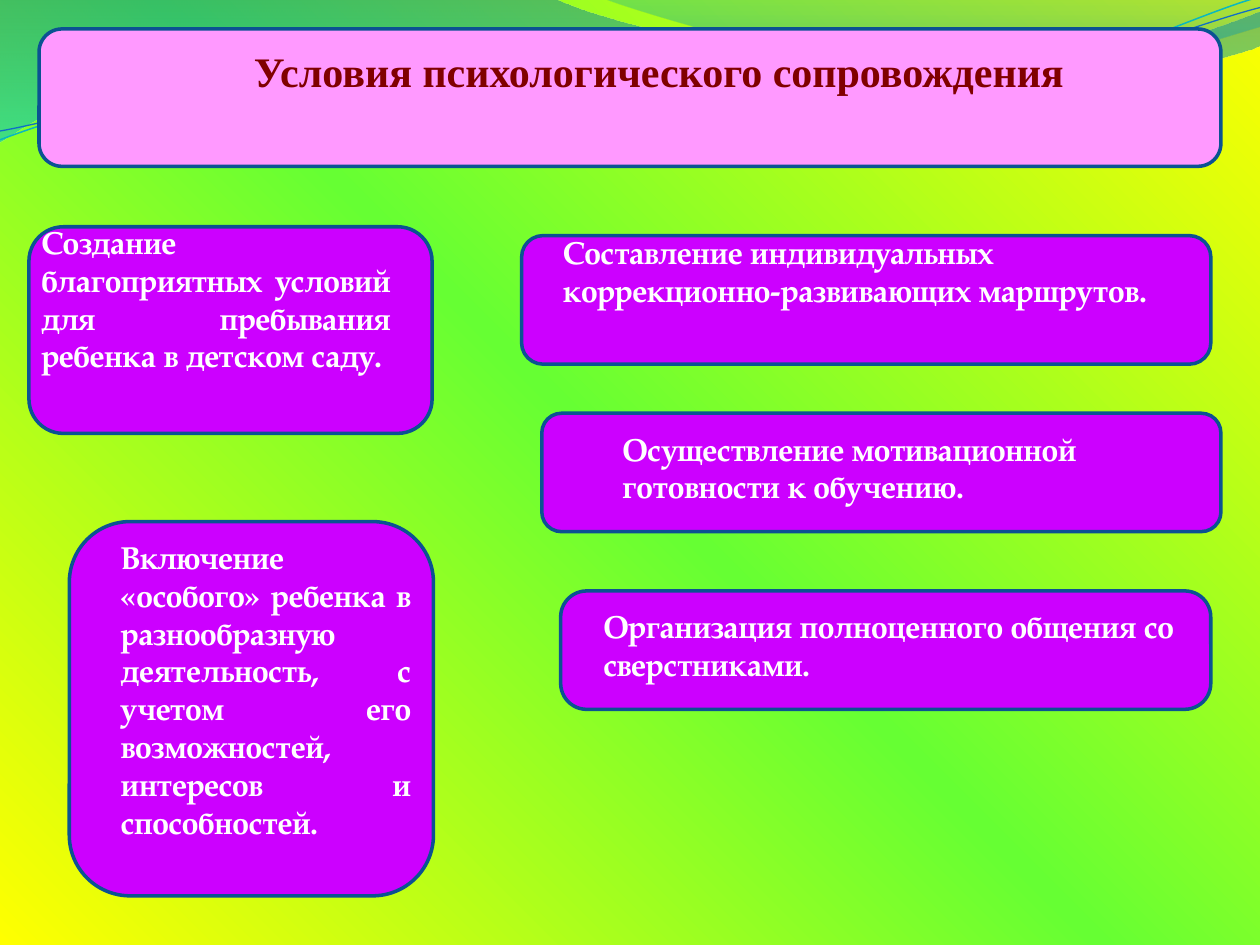
from dataclasses import dataclass

from lxml.etree import SubElement
from pptx import Presentation
from pptx.dml.color import RGBColor
from pptx.enum.shapes import MSO_SHAPE
from pptx.enum.text import MSO_AUTO_SIZE, PP_ALIGN
from pptx.oxml.ns import qn
from pptx.util import Inches, Pt


@dataclass(frozen=True)
class Theme:
    edge: str = "0B5292"
    banner: str = "FF99FF"
    card: str = "CC00FF"
    title: str = "800000"
    body: str = "FFFFFF"
    title_font: str = "Times New Roman"
    body_font: str = "TeX Gyre Pagella"
    title_size: float = 24
    body_size: float = 18
    edge_width: float = 2
    backdrop: tuple = ((0, "FFFF00", 100), (50, "66FF33", 100), (100, "FFFF00", 100))
    wide_wave: tuple = ((0, "0074A1", 45), (100, "00C6CF", 55))
    crest_wave: tuple = ((0, "00A1A9", 30), (80, "008BBF", 45))
    upper_strand: str = "0AB8BF"
    lower_strand: str = "0F6FC6"


def set_stops(grad, stops):
    """Replace a gradient's contents with (position %, colour, opacity %) stops."""
    for child in list(grad):
        grad.remove(child)
    stop_list = SubElement(grad, qn("a:gsLst"))
    for position, color, opacity in stops:
        stop = SubElement(stop_list, qn("a:gs"), pos=str(position * 1000))
        clr = SubElement(stop, qn("a:srgbClr"), val=color)
        if opacity < 100:
            SubElement(clr, qn("a:alpha"), val=str(opacity * 1000))


def bend_segments(sp, segments):
    """Merge each curve's three straight steps into one cubic Bezier."""
    steps = iter(list(sp._element.iter(qn("a:lnTo"))))
    for seg in segments:
        first = next(steps)
        if len(seg) == 6:
            first.tag = qn("a:cubicBezTo")
            for step in (next(steps), next(steps)):
                first.append(step[0])
                step.getparent().remove(step)


class SlideBuilder:
    def __init__(self, slide, theme):
        self.s = slide
        self.theme = theme

    def background(self):
        self.s.background.fill.gradient()
        grad = self.s._element.find(".//" + qn("a:gradFill"))
        set_stops(grad, self.theme.backdrop)
        radial = SubElement(grad, qn("a:path"), path="circle")
        SubElement(radial, qn("a:fillToRect"), l="100000", b="100000")

    def outline(self, start, segments, close):
        """Draw segments: 2 numbers are a line's end, 6 a cubic curve's points."""
        points = [(Inches(seg[i]), Inches(seg[i + 1]))
                  for seg in segments for i in range(0, len(seg), 2)]
        builder = self.s.shapes.build_freeform(*map(Inches, start))
        builder.add_line_segments(points, close=close)
        sp = builder.convert_to_shape()
        bend_segments(sp, segments)
        sp.shadow.inherit = False
        return sp

    def wave(self, start, segments, stops):
        sp = self.outline(start, segments, close=True)
        sp.line.fill.background()
        sp.fill.gradient()
        grad = sp._element.spPr.find(qn("a:gradFill"))
        set_stops(grad, stops)
        SubElement(grad, qn("a:lin"), ang="5400000", scaled="0")

    def strand(self, start, segments, color, width):
        sp = self.outline(start, segments, close=False)
        sp.fill.background()
        sp.line.color.rgb = RGBColor.from_string(color)
        sp.line.width = Pt(width)

    def panel(self, box, color, radius=None):
        sp = self.s.shapes.add_shape(MSO_SHAPE.ROUNDED_RECTANGLE, *map(Inches, box))
        if radius is not None:
            sp.adjustments[0] = radius
        sp.shadow.inherit = False
        sp.fill.solid()
        sp.fill.fore_color.rgb = RGBColor.from_string(color)
        sp.line.color.rgb = RGBColor.from_string(self.theme.edge)
        sp.line.width = Pt(self.theme.edge_width)

    def text(self, box, text, *, font, size, color, align=PP_ALIGN.LEFT):
        tf = self.s.shapes.add_textbox(*map(Inches, box)).text_frame
        tf.word_wrap = True
        tf.auto_size = MSO_AUTO_SIZE.SHAPE_TO_FIT_TEXT
        p = tf.paragraphs[0]
        p.alignment = align
        r = p.add_run()
        r.text = text
        r.font.name = font
        r.font.size = Pt(size)
        r.font.bold = True
        r.font.color.rgb = RGBColor.from_string(color)

    def banner(self, box, text_box, text):
        t = self.theme
        self.panel(box, t.banner)
        self.text(text_box, text, font=t.title_font, size=t.title_size,
                  color=t.title, align=PP_ALIGN.CENTER)

    def card(self, box, text_box, text, align=PP_ALIGN.LEFT, radius=None):
        t = self.theme
        self.panel(box, t.card, radius)
        self.text(text_box, text, font=t.body_font, size=t.body_size,
                  color=t.body, align=align)


CARDS = [
    dict(box=(0.23, 1.8, 3.2, 1.64), text_box=(0.23, 1.72, 2.97, 1.92),
         text="Создание благоприятных условий для пребывания ребенка в детском саду.",
         align=PP_ALIGN.JUSTIFY),
    dict(box=(4.45, 4.69, 5.16, 0.94), text_box=(4.69, 4.77, 4.77, 1.01),
         text="Организация полноценного общения со сверстниками.", radius=0.22),
    dict(box=(4.14, 1.87, 5.47, 1.02), text_box=(4.37, 1.8, 5, 1.01),
         text="Составление индивидуальных коррекционно-развивающих маршрутов."),
    dict(box=(0.55, 4.14, 2.89, 2.97), text_box=(0.86, 4.22, 2.5, 2.52),
         text="Включение «особого» ребенка в разнообразную деятельность, с учетом его "
              "возможностей, интересов и способностей.",
         align=PP_ALIGN.JUSTIFY),
    dict(box=(4.3, 3.28, 5.39, 0.94), text_box=(4.84, 3.36, 4.45, 1.31),
         text="Осуществление мотивационной готовности к обучению."),
]


def draw_waves(b):
    t = b.theme
    b.wave((0, 0), [(4.4, -0.01), (4.76, 0.17, 6.64, 0.63, 7.58, 0.63),
                    (8.53, 0.63, 9.58, 0.26, 10, 0.09), (10.01, 0.36),
                    (9.83, 0.44, 8.7, 0.76, 7.46, 0.75),
                    (6.22, 0.75, 3.82, 0.28, 2.57, 0.34),
                    (1.29, 0.36, 0.46, 0.83, -0.01, 1.13)], t.wide_wave)
    b.wave((4.79, -0.01), [(5.09, 0.11, 6.82, 0.62, 7.69, 0.65),
                           (8.56, 0.69, 9.61, 0.32, 10, 0.21), (10, 0)], t.crest_wave)
    b.strand((0, 1.11), [(0.48, 0.93, 1.58, 0.57, 2.77, 0.52),
                         (3.95, 0.47, 5.93, 0.89, 7.13, 0.8),
                         (8.33, 0.71, 9.38, 0.15, 9.98, -0.02)], t.upper_strand, 0.85)
    b.strand((0, 1.04), [(0.47, 0.96, 1.64, 0.61, 2.83, 0.56),
                         (4.03, 0.51, 5.97, 0.84, 7.17, 0.75),
                         (8.36, 0.67, 9.41, 0.21, 10, 0.06)], t.lower_strand, 0.75)


def main():
    prs = Presentation()
    prs.slide_width, prs.slide_height = Inches(10), Inches(7.5)
    b = SlideBuilder(prs.slides.add_slide(prs.slide_layouts[6]), Theme())
    b.background()
    draw_waves(b)
    b.banner((0.31, 0.23, 9.38, 1.09), (1.56, 0.31, 7.34, 0.91),
             "Условия психологического сопровождения")
    for card in CARDS:
        b.card(**card)
    prs.save("out.pptx")


if __name__ == "__main__":
    main()
